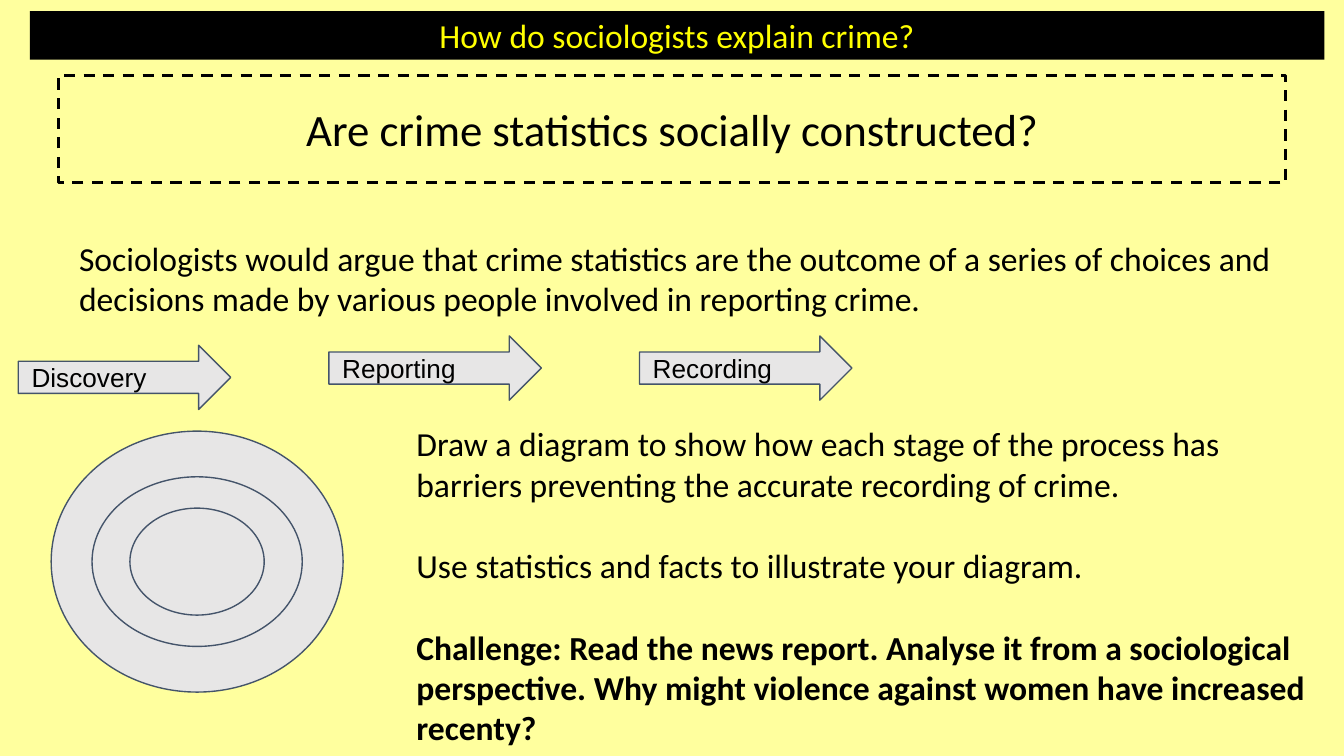
import dataclasses

import pptx
import pptx.dml.color
import pptx.enum.dml
import pptx.enum.shapes
import pptx.enum.text
import pptx.util

Pt = pptx.util.Pt
Rgb = pptx.dml.color.RGBColor.from_string
Kind = pptx.enum.shapes.MSO_SHAPE
Align = pptx.enum.text.PP_ALIGN
Anchor = pptx.enum.text.MSO_ANCHOR


@dataclasses.dataclass(frozen=True)
class Theme:
    back: str = "FFFF9E"
    dark: str = "000000"
    bright: str = "FFFF00"
    grey: str = "E7E6E6"
    edge: str = "44546A"
    font: str = "Calibri"
    label: str = "Arial"
    large: int = 24
    body: int = 18
    small: int = 14
    inset: float = 7.2
    gap: int = 22


THEME = Theme()


def place(shape, box):
    shape.left, shape.top, shape.width, shape.height = map(Pt, box)


def write(shape, lines, size, font=THEME.font, color=THEME.dark,
          align=Align.LEFT, anchor=Anchor.MIDDLE):
    """Fill a shape with (text, bold) paragraphs."""
    frame = shape.text_frame
    frame.word_wrap = True
    frame.auto_size = pptx.enum.text.MSO_AUTO_SIZE.NONE
    frame.vertical_anchor = anchor
    frame.margin_left = frame.margin_right = Pt(THEME.inset)
    frame.margin_top = frame.margin_bottom = Pt(THEME.inset)
    for i, (text, bold) in enumerate(lines):
        para = frame.add_paragraph() if i else frame.paragraphs[0]
        para.alignment = align
        para.space_before = Pt(THEME.gap if i else 0)
        run = para.add_run()
        run.text = text
        run.font.name = font
        run.font.size = Pt(size)
        run.font.bold = bold
        run.font.color.rgb = Rgb(color)


def draw(slide, kind, box, fill=THEME.grey, edge=THEME.edge, width=0.75):
    shape = slide.shapes.add_shape(kind, *map(Pt, box))
    shape.shadow.inherit = False
    if fill:
        shape.fill.solid()
        shape.fill.fore_color.rgb = Rgb(fill)
    else:
        shape.fill.background()
    shape.line.color.rgb = Rgb(edge)
    shape.line.width = Pt(width)
    return shape


def banner(slide, box, text):
    title = slide.shapes.title
    place(title, box)
    title.fill.solid()
    title.fill.fore_color.rgb = Rgb(THEME.dark)
    write(title, [(text, False)], THEME.body, color=THEME.bright,
          align=Align.CENTER)


def question(slide, box, text):
    frame = draw(slide, Kind.RECTANGLE, box, None, THEME.dark, 1.5)
    frame.line.dash_style = pptx.enum.dml.MSO_LINE.DASH
    write(frame, [(text, False)], THEME.large, align=Align.CENTER)


def prose(slide, box, lines):
    text = slide.shapes.add_textbox(*map(Pt, box))
    write(text, lines, THEME.body, anchor=Anchor.TOP)


def stages(slide, box, names, drop):
    """Spread one arrow per name over the box, the first lowered by drop."""
    left, top, width, height = box
    size = 113.8
    step = (width - size) / (len(names) - 1)
    for i, name in enumerate(names):
        down = 0 if i else drop
        arrow = draw(slide, Kind.RIGHT_ARROW,
                     (left + i * step, top + down, size, height))
        write(arrow, [(name, False)], THEME.small, THEME.label)


def rings(slide, box, scales):
    """Nest ovals around the centre of the box."""
    left, top, width, height = box
    for across, down in scales:
        w, h = width * across, height * down
        draw(slide, Kind.OVAL,
             (left + (width - w) / 2, top + (height - h) / 2, w, h))


def main():
    deck = pptx.Presentation()
    deck.slide_width, deck.slide_height = Pt(720), Pt(405)
    slide = deck.slides.add_slide(deck.slide_layouts.get_by_name("Title Only"))
    slide.background.fill.solid()
    slide.background.fill.fore_color.rgb = Rgb(THEME.back)

    banner(slide, (16, 6, 693.5, 26), "How do sociologists explain crime?")
    question(slide, (31.5, 40.3, 657.4, 57.6),
             "Are crime statistics socially constructed?")
    prose(slide, (35.3, 120.2, 657.4, 43.2), [
        ("Sociologists would argue that crime statistics are the outcome of "
         "a series of choices and decisions made by various people involved "
         "in reporting crime.", False)])
    prose(slide, (216, 219.6, 504, 131), [
        ("Draw a diagram to show how each stage of the process has barriers "
         "preventing the accurate recording of crime.", False),
        ("Use statistics and facts to illustrate your diagram.", False),
        ("Challenge: Read the news report. Analyse it from a sociological "
         "perspective. Why might violence against women have increased "
         "recenty?", True)])
    stages(slide, (9.8, 180, 446.6, 34.4),
           ["Discovery", "Reporting", "Recording"], 5)
    rings(slide, (27.4, 231, 156.4, 139.8),
          [(1, 1), (0.72, 0.65), (0.46, 0.41)])
    deck.save("out.pptx")


if __name__ == "__main__":
    main()
